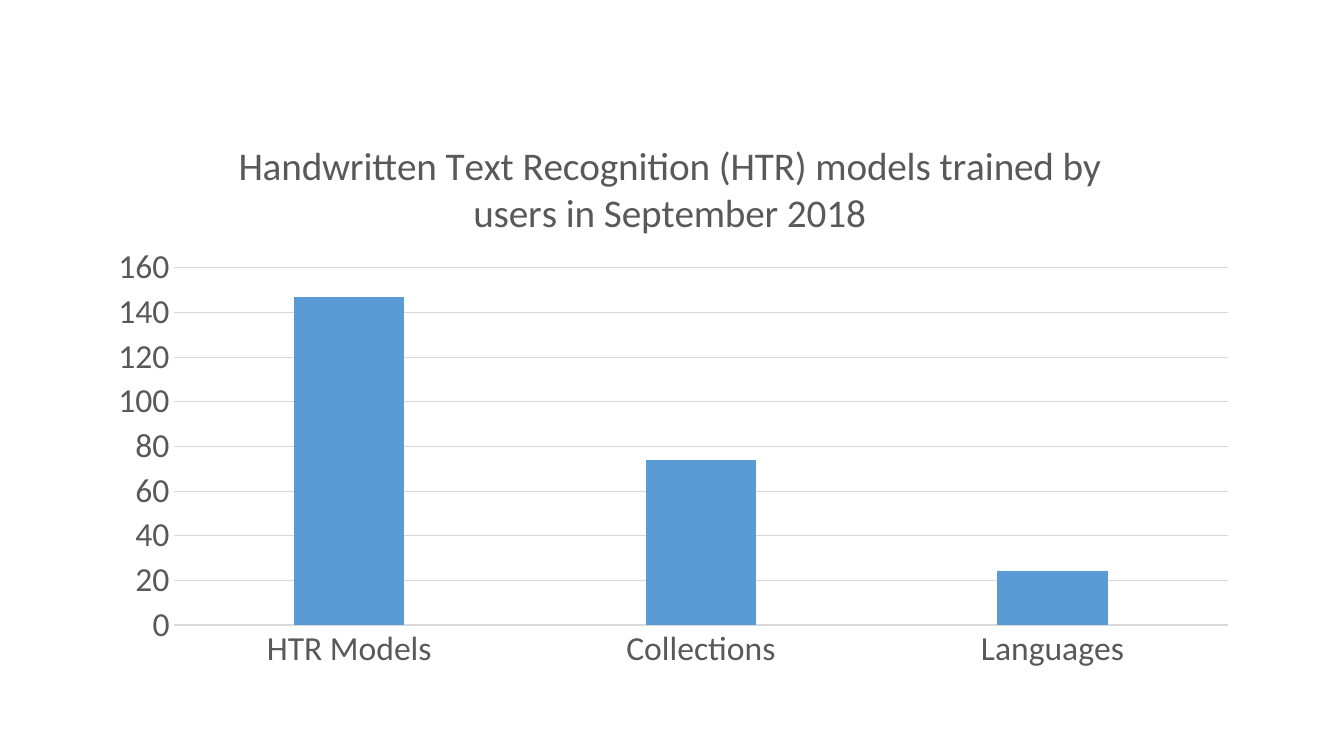
from lxml import etree
from pptx import Presentation
from pptx.chart.data import CategoryChartData as ChartData
from pptx.dml.color import RGBColor
from pptx.enum.chart import XL_CHART_TYPE as ChartType, XL_TICK_MARK as Tick
from pptx.oxml.ns import qn
from pptx.util import Pt

GREY = RGBColor(0x59, 0x59, 0x59)
RULE = RGBColor(0xD9, 0xD9, 0xD9)
BLUE = RGBColor(0x5B, 0x9B, 0xD5)


def add_text(tf, text, font="Calibri", size=28, color=GREY, bold=False):
    p = tf.paragraphs[0]
    r = p.add_run()
    r.text = text
    r.font.name, r.font.size, r.font.bold = font, Pt(size), bold
    r.font.color.rgb = color


def set_layout(parent, before, **values):
    old = parent.find(qn("c:layout"))
    if old is not None:
        parent.remove(old)
    layout = etree.Element(qn("c:layout"))
    parent.find(qn(before)).addprevious(layout)
    manual = etree.SubElement(layout, qn("c:manualLayout"))
    for tag, value in values.items():
        etree.SubElement(manual, qn(f"c:{tag}")).set("val", str(value))


class Deck:
    """Holds the chart style and the current slide."""

    font, size, line = "Calibri", 24, 0.75

    def __init__(self, prs):
        self.s = prs.slides.add_slide(prs.slide_layouts[6])

    def style_axis(self, axis):
        axis.major_tick_mark = axis.minor_tick_mark = Tick.NONE
        font = axis.tick_labels.font
        font.name, font.size, font.color.rgb = self.font, Pt(self.size), GREY

    def rule(self, fmt):
        fmt.line.color.rgb = RULE
        fmt.line.width = Pt(self.line)

    def column_chart(self, title, cats, name, vals, x, y, w, h):
        data = ChartData()
        data.categories = cats
        data.add_series(name, vals)
        frame = self.s.shapes.add_chart(
            ChartType.COLUMN_CLUSTERED, Pt(x), Pt(y), Pt(w), Pt(h), data)
        chart = frame.chart
        chart.has_legend = False
        chart.font.name, chart.font.size = self.font, Pt(self.size)
        add_text(chart.chart_title.text_frame, title)
        chart.chart_title.include_in_layout = False

        plot = chart.plots[0]
        plot.gap_width, plot.overlap = 219, -27
        plot.vary_by_categories = False
        fill = plot.series[0].format.fill
        fill.solid()
        fill.fore_color.rgb = BLUE

        cat, val = chart.category_axis, chart.value_axis
        self.style_axis(cat)
        self.style_axis(val)
        self.rule(cat.format)
        self.rule(val.major_gridlines.format)
        val.format.line.fill.background()
        val.minimum_scale, val.maximum_scale, val.major_unit = 0, 160, 20

        area = chart.element.chart.plotArea
        set_layout(area, "c:barChart", layoutTarget="inner", xMode="edge",
                   yMode="edge", x=0.07, y=0.27, w=0.91, h=0.63)
        set_layout(chart.chart_title.element if hasattr(chart.chart_title, "element")
                   else chart.element.chart.find(qn("c:title")), "c:overlay",
                   xMode="edge", yMode="edge", x=0.12, y=0.03)


def main():
    prs = Presentation()
    prs.slide_width, prs.slide_height = Pt(960), Pt(540)
    deck = Deck(prs)
    deck.column_chart(
        "Handwritten Text Recognition (HTR) models trained by users in September 2018",
        ["HTR Models", "Collections", "Languages"], "Series 1", [147, 74, 24],
        66, 82, 828, 405)
    prs.save("out.pptx")


if __name__ == "__main__":
    main()
